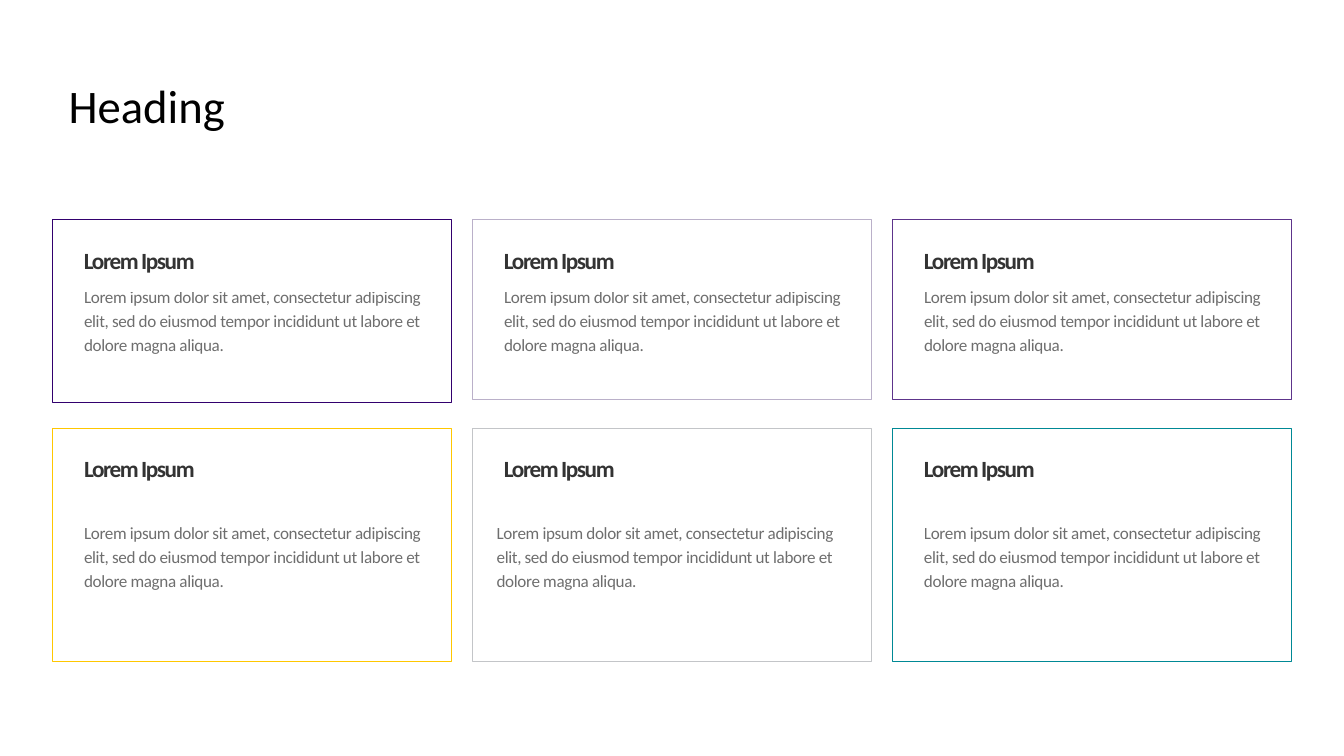
from dataclasses import dataclass

from lxml.etree import SubElement
from pptx import Presentation
from pptx.dml.color import RGBColor
from pptx.enum.shapes import MSO_SHAPE
from pptx.enum.text import MSO_ANCHOR, MSO_AUTO_SIZE, PP_ALIGN
from pptx.oxml.ns import qn
from pptx.util import Inches, Pt


@dataclass(frozen=True)
class TextStyle:
    """Look of one kind of text."""
    size: float
    color: str
    line_spacing: float
    bold: bool = False
    tracking: float = 0
    opacity: int = 100


@dataclass(frozen=True)
class Theme:
    """Colours, font and type sizes of the slide."""
    font: str = "Calibri"
    card_fill: str = "FFFFFF"
    border_width: float = 0.75
    title: TextStyle = TextStyle(50, "000000", 0.9)
    card_heading: TextStyle = TextStyle(24.9, "333333", Pt(29), True, -1.5)
    card_body: TextStyle = TextStyle(18.3, "000000", Pt(25.4), False, -0.4, 56)


@dataclass(frozen=True)
class Box:
    """Rectangle measured in inches."""
    left: float
    top: float
    width: float
    height: float

    def lengths(self):
        """Return the four sides as slide lengths."""
        return [Inches(side) for side in (self.left, self.top, self.width, self.height)]


@dataclass(frozen=True)
class Card:
    """Border colour and text sizes of one card."""
    border: str
    height: float
    heading_width: float
    heading_height: float
    body_width: float
    body_height: float
    body_shift: float = 0


THEME = Theme()
HEADING = "Lorem Ipsum"
BODY = ("Lorem ipsum dolor sit amet, consectetur adipiscing elit, sed do eiusmod "
        "tempor incididunt ut labore et dolore magna aliqua.")
GRID_LEFT, CARD_WIDTH, COLUMN_STEP = 0.78, 5.94, 6.25
INDENT, HEADING_DROP = 0.47, 0.4
ROWS = [
    (3.27, 0.95, [Card("32006E", 2.72, 5.67, 0.4, 5.08, 1.41),
                  Card("BAB0C9", 2.67, 5.67, 0.4, 5.09, 1.41),
                  Card("5D348B", 2.67, 5.67, 0.49, 5.25, 1.06)]),
    (6.38, 1.35, [Card("FFC700", 3.46, 5.08, 0.44, 5.25, 1.06),
                  Card("C3C5C8", 3.46, 5.67, 0.4, 5.09, 1.41, -0.11),
                  Card("008995", 3.46, 5.67, 0.44, 5.17, 1.41)]),
]


def write_text(text_frame, text, style):
    """Put one styled run into the first paragraph of a frame."""
    text_frame.word_wrap = True
    text_frame.auto_size = MSO_AUTO_SIZE.NONE
    paragraph = text_frame.paragraphs[0]
    paragraph.alignment = PP_ALIGN.LEFT
    paragraph.line_spacing = style.line_spacing
    run = paragraph.add_run()
    run.text = text
    run.font.name = THEME.font
    run.font.size = Pt(style.size)
    run.font.bold = style.bold
    run.font.color.rgb = RGBColor.from_string(style.color)
    properties = run._r.get_or_add_rPr()
    if style.tracking:
        properties.set("spc", str(round(style.tracking * 100)))
    if style.opacity < 100:
        color = properties.find(f".//{qn('a:srgbClr')}")
        SubElement(color, qn("a:alpha")).set("val", str(style.opacity * 1000))


def add_text(slide, box, text, style):
    """Add a text box without insets."""
    text_frame = slide.shapes.add_textbox(*box.lengths()).text_frame
    text_frame.margin_left = text_frame.margin_right = Inches(0)
    text_frame.margin_top = text_frame.margin_bottom = Inches(0)
    write_text(text_frame, text, style)


def place_title(slide, box, text):
    """Move the title placeholder to its box and fill it."""
    title = slide.shapes.title
    title.left, title.top, title.width, title.height = box.lengths()
    title.text_frame.vertical_anchor = MSO_ANCHOR.MIDDLE
    write_text(title.text_frame, text, THEME.title)


def add_card(slide, box, card, body_drop):
    """Draw a bordered card with its heading and body text."""
    shape = slide.shapes.add_shape(MSO_SHAPE.RECTANGLE, *box.lengths())
    shape.shadow.inherit = False
    shape.fill.solid()
    shape.fill.fore_color.rgb = RGBColor.from_string(THEME.card_fill)
    shape.line.color.rgb = RGBColor.from_string(card.border)
    shape.line.width = Pt(THEME.border_width)
    text_left = box.left + INDENT
    heading_box = Box(text_left, box.top + HEADING_DROP, card.heading_width, card.heading_height)
    body_box = Box(text_left + card.body_shift, box.top + body_drop,
                   card.body_width, card.body_height)
    add_text(slide, heading_box, HEADING, THEME.card_heading)
    add_text(slide, body_box, BODY, THEME.card_body)


def add_card_row(slide, left, top, body_drop, cards):
    """Set a row of cards at equal steps."""
    for column, card in enumerate(cards):
        box = Box(left + column * COLUMN_STEP, top, CARD_WIDTH, card.height)
        add_card(slide, box, card, body_drop)


def main():
    """Build and save the slide."""
    presentation = Presentation()
    presentation.slide_width = Inches(20)
    presentation.slide_height = Inches(11.25)
    slide = presentation.slides.add_slide(presentation.slide_layouts.get_by_name("Title Only"))
    place_title(slide, Box(0.92, 1.19, 17.25, 0.86), "Heading")
    for top, body_drop, cards in ROWS:
        add_card_row(slide, GRID_LEFT, top, body_drop, cards)
    presentation.save("out.pptx")


if __name__ == "__main__":
    main()
